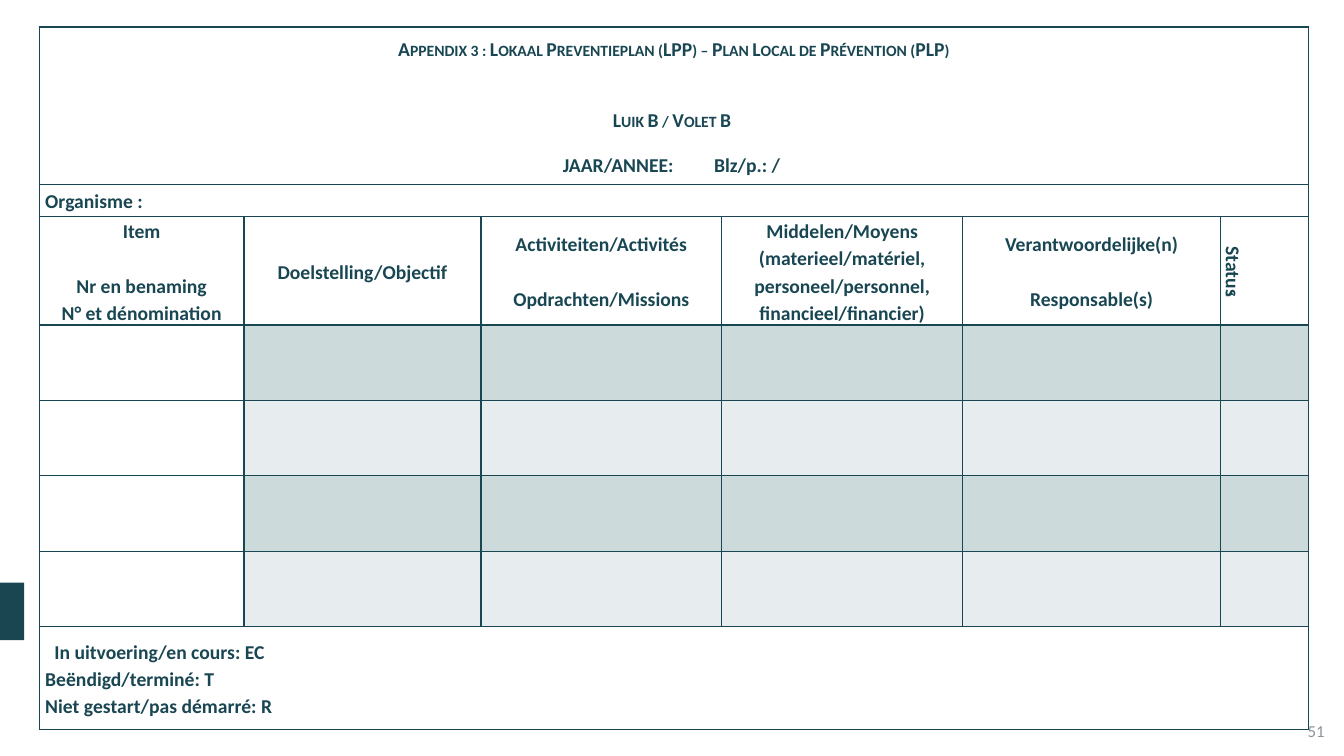
from dataclasses import dataclass

from lxml.etree import SubElement
from pptx import Presentation
from pptx.dml.color import RGBColor
from pptx.enum.shapes import MSO_SHAPE
from pptx.enum.text import MSO_ANCHOR as Anchor, PP_ALIGN as Align
from pptx.oxml.ns import qn
from pptx.table import _Cell as Cell
from pptx.util import Cm, Pt

INK = RGBColor(0x18, 0x46, 0x52)
ACCENT = RGBColor(0x1A, 0x46, 0x52)
GREY = RGBColor(0x8C, 0x94, 0x98)
WHITE = RGBColor(0xFF, 0xFF, 0xFF)
DARK_BAND = RGBColor(0xCC, 0xDA, 0xDC)
LIGHT_BAND = RGBColor(0xE7, 0xED, 0xEE)
FONT = "Calibri"
LINE_GAP = 19.7

COLUMN_WIDTHS = (5.16, 5.97, 6.07, 6.07, 6.5, 2.21)
ROW_HEIGHTS = (3.96, 0.81, 2.34, 1.9, 1.9, 1.9, 1.9, 2.59)
HEADER_ROW = 2
BANDS = {3: DARK_BAND, 4: LIGHT_BAND, 5: DARK_BAND, 6: LIGHT_BAND}


@dataclass(frozen=True)
class Line:
    text: str
    align: Align = Align.CENTER
    before: float = 0
    after: float = 0
    small_caps: bool = False
    indent: float = 0
    margin: float = 0
    tab: float = 0
    superscript: str = ""


TITLE = (
    Line("Appendix 3\u00a0: Lokaal Preventieplan (LPP) – Plan Local de Prévention (PLP)",
         small_caps=True),
    Line("Luik B / Volet B ", before=31.7, after=12, small_caps=True),
    Line("JAAR/ANNEE: \tBlz/p.: / ", tab=6.3),
)
ORGANISATION = (Line("Organisme :", Align.LEFT),)
HEADERS = (
    (Line("Item"), Line("Nr en benaming", before=LINE_GAP), Line("N° et dénomination")),
    (Line("Doelstelling/Objectif"),),
    (Line("Activiteiten/Activités"), Line("Opdrachten/Missions", before=LINE_GAP)),
    (Line("Middelen/Moyens"),
     Line("(materieel/matériel, personeel/personnel, financieel/financier)")),
    (Line("Verantwoordelijke(n)"), Line("Responsable(s)", before=LINE_GAP)),
    (Line("Status", margin=0.2, superscript="1"),),
)
LEGEND = (
    Line("In uitvoering/en cours: EC\vBeëndigd/terminé: T\vNiet gestart/pas démarré: R",
         Align.LEFT, indent=0.23),
)
MERGED_ROWS = {0: TITLE, 1: ORGANISATION, 7: LEGEND}


def style_cell(cell: Cell, color: RGBColor) -> None:
    properties = cell._tc.get_or_add_tcPr()
    for side in ("lnL", "lnR", "lnT", "lnB"):
        border = SubElement(properties, qn(f"a:{side}"), w=str(Pt(1)))
        fill = SubElement(border, qn("a:solidFill"))
        SubElement(fill, qn("a:srgbClr"), val=str(INK))
    cell.fill.solid()
    cell.fill.fore_color.rgb = color


def write_cell(cell: Cell, lines: tuple[Line, ...]) -> None:
    cell.vertical_anchor = Anchor.MIDDLE
    cell.margin_left = cell.margin_right = Cm(0.15)
    cell.margin_top = cell.margin_bottom = 0
    frame = cell.text_frame
    for index, line in enumerate(lines):
        paragraph = frame.add_paragraph() if index else frame.paragraphs[0]
        paragraph.text = line.text
        paragraph.alignment = line.align
        paragraph.line_spacing = 1.15
        if line.before:
            paragraph.space_before = Pt(line.before)
        if line.after:
            paragraph.space_after = Pt(line.after)
        properties = paragraph._p.get_or_add_pPr()
        properties.set("marL", str(Cm(line.margin)))
        properties.set("indent", str(Cm(line.indent)))
        if line.tab:
            tabs = SubElement(properties, qn("a:tabLst"))
            SubElement(tabs, qn("a:tab"), pos=str(Cm(line.tab)), algn="l")
        font = paragraph.font
        font.name, font.size, font.bold = FONT, Pt(14), True
        font.color.rgb = INK
        if line.small_caps:
            properties.find(qn("a:defRPr")).set("cap", "small")
        if line.superscript:
            run = paragraph.add_run()
            run.text = line.superscript
            run._r.get_or_add_rPr().set("baseline", "30000")


def main() -> None:
    presentation = Presentation()
    presentation.slide_width, presentation.slide_height = Cm(33.87), Cm(19.05)
    slide = presentation.slides.add_slide(presentation.slide_layouts[6])

    number = slide.shapes.add_textbox(Cm(26.01), Cm(17.91), Cm(7.62), Cm(1.02))
    number.text_frame.word_wrap = True
    number.text_frame.vertical_anchor = Anchor.MIDDLE
    paragraph = number.text_frame.paragraphs[0]
    paragraph.text = "51"
    paragraph.alignment = Align.RIGHT
    paragraph.font.name, paragraph.font.size = FONT, Pt(12)
    paragraph.font.color.rgb = GREY

    marker = slide.shapes.add_shape(MSO_SHAPE.RECTANGLE, 0, Cm(14.68), Cm(0.61), Cm(1.45))
    marker.shadow.inherit = False
    marker.fill.solid()
    marker.fill.fore_color.rgb = ACCENT
    marker.line.fill.background()

    table = slide.shapes.add_table(
        len(ROW_HEIGHTS), len(COLUMN_WIDTHS), Cm(0.99), Cm(0.68),
        Cm(sum(COLUMN_WIDTHS)), Cm(sum(ROW_HEIGHTS))).table
    table.first_row = table.horz_banding = False
    for column, width in zip(table.columns, COLUMN_WIDTHS):
        column.width = Cm(width)
    for row_index, (row, height) in enumerate(zip(table.rows, ROW_HEIGHTS)):
        row.height = Cm(height)
        for column_index, cell in enumerate(row.cells):
            style_cell(cell, BANDS.get(row_index, WHITE) if column_index else WHITE)

    last_column = len(COLUMN_WIDTHS) - 1
    for row_index, lines in MERGED_ROWS.items():
        first = table.cell(row_index, 0)
        first.merge(table.cell(row_index, last_column))
        write_cell(first, lines)
    for column_index, lines in enumerate(HEADERS):
        write_cell(table.cell(HEADER_ROW, column_index), lines)
    table.cell(HEADER_ROW, last_column)._tc.get_or_add_tcPr().set("vert", "vert")

    presentation.save("out.pptx")


if __name__ == "__main__":
    main()
